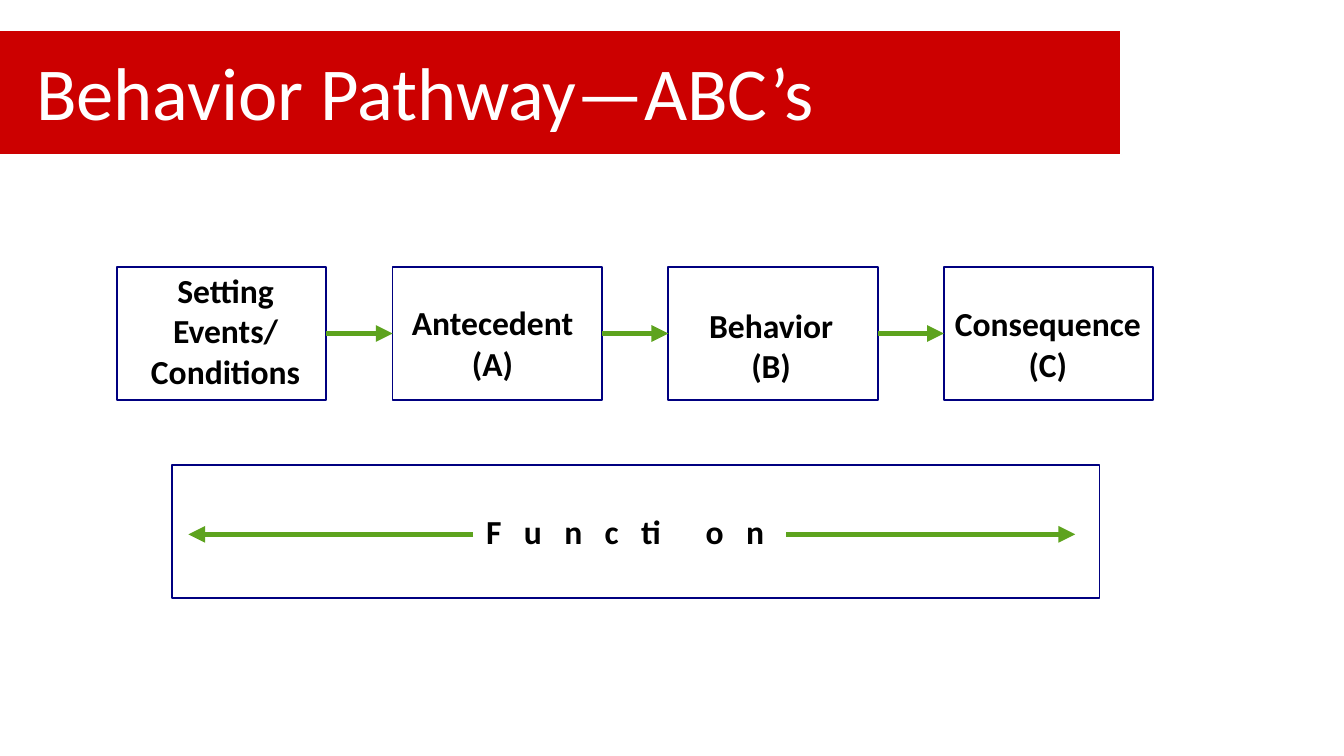
from pptx import Presentation
from pptx.dml.color import RGBColor
from pptx.enum import shapes, text
from pptx.oxml import ns, xmlchemy
from pptx.util import Cm, Pt

COLORS = {"band": "CC0000", "white": "FFFFFF", "border": "000080",
          "arrow": "5DA31E", "ink": "000000"}
STAGE_LEFT, STAGE_TOP, STAGE_PITCH = 2.21, 5.05, 5.21
STAGE_W, BOX_H = 3.96, 2.51
STAGES = [
    (["Setting Events/", "Conditions"], 2.36, 4.98, 3.81),
    (["Antecedent", "(A)"], 7.19, 5.59, 4.24),
    (["Behavior", "(B)"], 12.67, 5.64, 3.81),
    (["Consequence", "(C)"], 17.48, 5.61, 4.65),
]


def color(name):
    """Return the named colour of the palette."""
    return RGBColor.from_string(COLORS[name])


def write(tf, lines, size=18, ink="ink", bold=True, align=text.PP_ALIGN.CENTER,
          wrap=True, tracking=None):
    """Fill a text frame with one formatted paragraph per line."""
    tf.word_wrap = wrap
    tf.auto_size = text.MSO_AUTO_SIZE.NONE
    for i, line in enumerate(lines):
        p = tf.paragraphs[0] if i == 0 else tf.add_paragraph()
        p.alignment = align
        r = p.add_run()
        r.text = line
        r.font.name, r.font.size, r.font.bold = "Calibri", Pt(size), bold
        r.font.color.rgb = color(ink)
        if tracking:
            r.font._element.set("spc", str(tracking * 100))


def add_label(s, lines, left, top, width, height, **style):
    """Add a text box, placed in centimetres."""
    sp = s.shapes.add_textbox(Cm(left), Cm(top), Cm(width), Cm(height))
    write(sp.text_frame, lines, **style)


def add_box(s, left, top, width, height, line="border", weight=1, fill=None):
    """Add a rectangle, placed in centimetres, and return it."""
    sp = s.shapes.add_shape(shapes.MSO_SHAPE.RECTANGLE,
                            Cm(left), Cm(top), Cm(width), Cm(height))
    sp.shadow.inherit = False
    sp.line.color.rgb = color(line)
    sp.line.width = Pt(weight)
    if fill:
        sp.fill.solid()
        sp.fill.fore_color.rgb = color(fill)
    else:
        sp.fill.background()
    return sp


def add_arrow(s, x1=0, x2=0, y=0, start=None, end=None):
    """Add a level arrow between two positions or two boxes."""
    sp = s.shapes.add_connector(shapes.MSO_CONNECTOR.STRAIGHT,
                                Cm(x1), Cm(y), Cm(x2), Cm(y))
    if start is not None:
        sp.begin_connect(start, 3)
    if end is not None:
        sp.end_connect(end, 1)
    sp.line.color.rgb = color("arrow")
    sp.line.width = Pt(3)
    head = xmlchemy.OxmlElement("a:tailEnd")
    head.set("type", "triangle")
    sp.line._get_or_add_ln().append(head)
    sp._element.find(ns.qn("p:spPr")).append(xmlchemy.OxmlElement("a:effectLst"))


def add_title(s, title):
    """Set the title over a coloured band."""
    band = add_box(s, -0.2, 0.58, 21.39, 2.34, line="white", weight=0.75, fill="band")
    s.shapes._spTree.insert(2, band._element)
    sp = s.shapes.title
    sp.left, sp.top, sp.width, sp.height = Cm(0.43), Cm(0.69), Cm(20.75), Cm(2.06)
    sp.text_frame.vertical_anchor = text.MSO_ANCHOR.MIDDLE
    write(sp.text_frame, [title], size=40, ink="white", bold=False,
          align=text.PP_ALIGN.LEFT)


def add_pathway(s):
    """Add the row of stages joined by arrows."""
    boxes = []
    for i, (lines, left, top, width) in enumerate(STAGES):
        boxes.append(add_box(s, STAGE_LEFT + i * STAGE_PITCH, STAGE_TOP, STAGE_W, BOX_H))
        add_label(s, lines, left, top, width, 1.96)
    for start, end in zip(boxes, boxes[1:]):
        add_arrow(s, start=start, end=end)


def add_function(s):
    """Add the function box with an arrow to each side."""
    add_box(s, 3.25, 8.79, 17.53, BOX_H)
    add_label(s, ["Function"], 8.94, 9.53, 6.15, 1.12, wrap=False,
              align=text.PP_ALIGN.LEFT, tracking=12)
    add_arrow(s, 8.94, 3.56, 10.1)
    add_arrow(s, 14.86, 20.32, 10.1)


def main():
    """Build and save the slide."""
    prs = Presentation()
    prs.slide_width, prs.slide_height = Cm(25.4), Cm(14.29)
    s = prs.slides.add_slide(prs.slide_layouts[5])
    add_title(s, "Behavior Pathway—ABC’s")
    add_pathway(s)
    add_function(s)
    prs.save("out.pptx")


if __name__ == "__main__":
    main()
